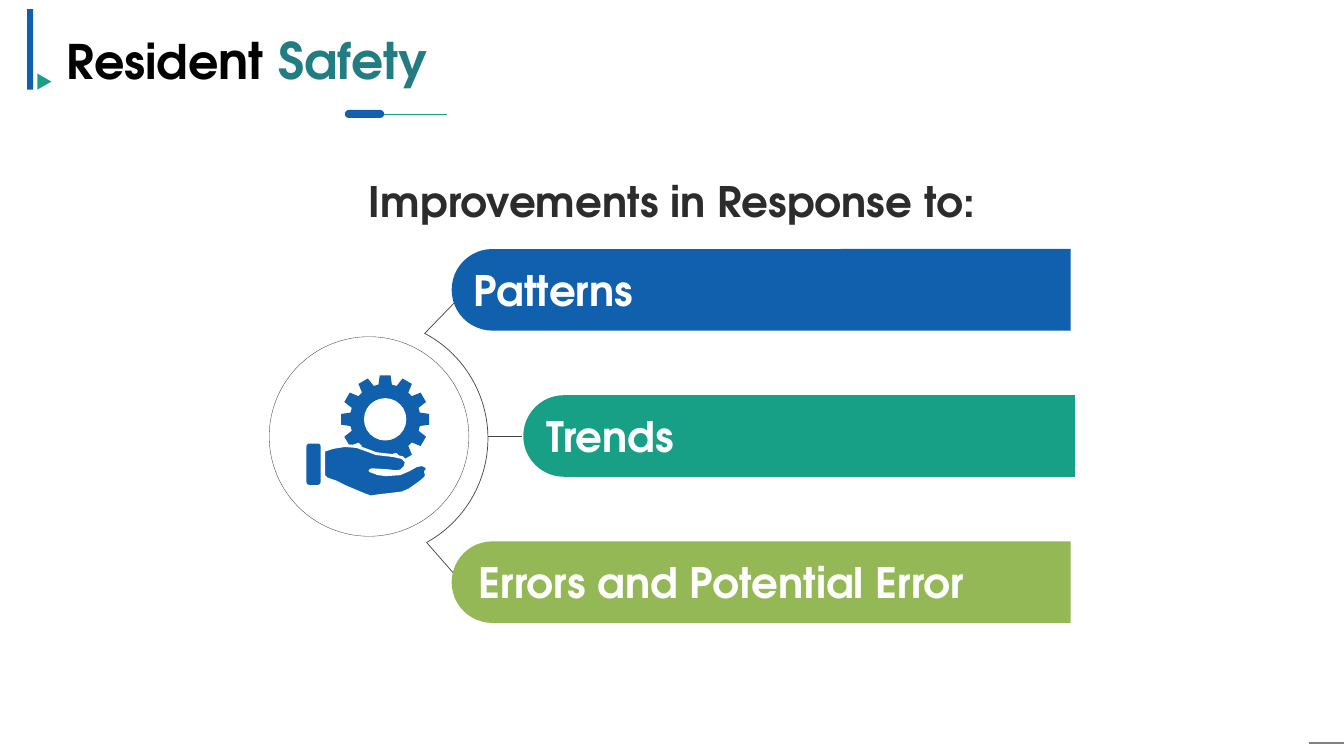
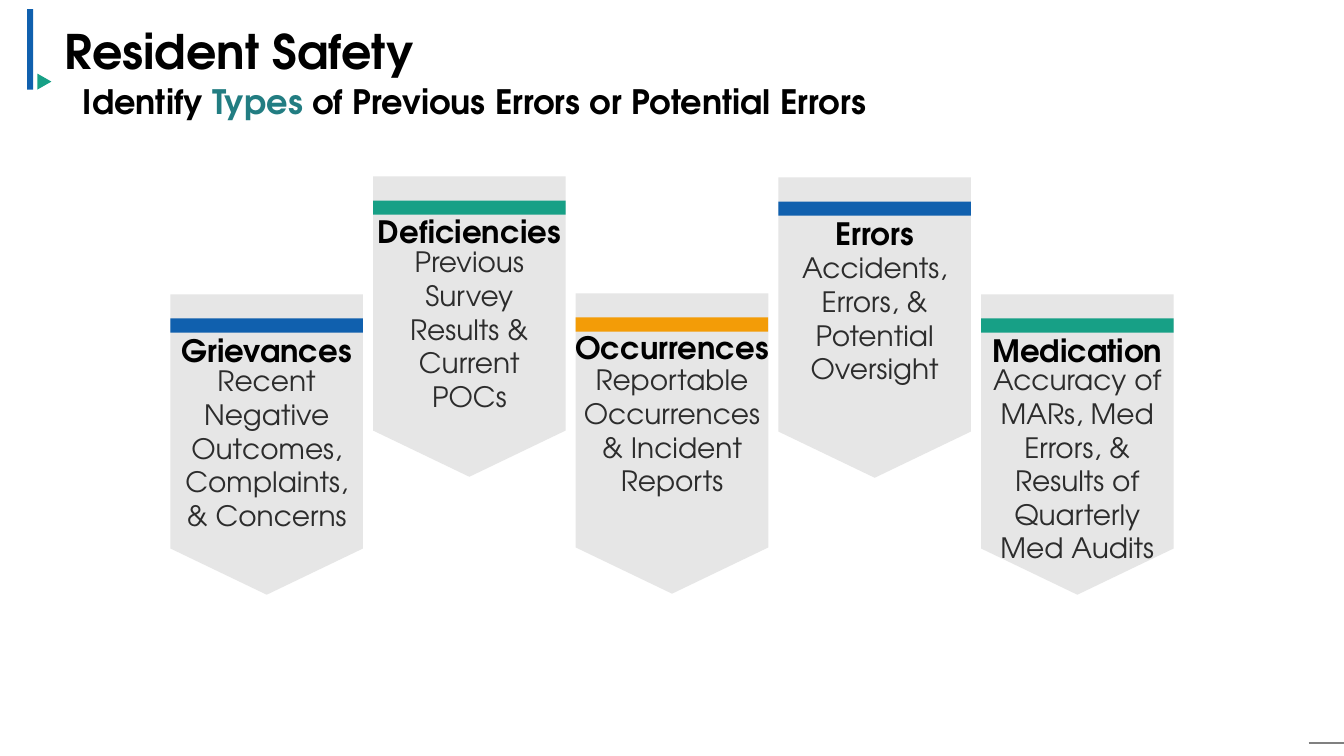
from math import cos, radians, sin

from lxml.etree import SubElement
from pptx import Presentation
from pptx.dml.color import RGBColor
from pptx.enum.shapes import MSO_CONNECTOR, MSO_SHAPE
from pptx.enum.text import MSO_ANCHOR, MSO_AUTO_SIZE, PP_ALIGN
from pptx.oxml.ns import qn
from pptx.util import Inches, Pt

FONT = "TeX Gyre Adventor"
BLUE = RGBColor(0x10, 0x60, 0xAE)
GREEN = RGBColor(0x17, 0xA0, 0x86)
LIME = RGBColor(0x95, 0xB8, 0x56)
AMBER = RGBColor(0xF3, 0x9C, 0x07)
TEAL = RGBColor(0x22, 0x7D, 0x82)
BLACK = RGBColor(0, 0, 0)
WHITE = RGBColor(0xFF, 0xFF, 0xFF)
INK = RGBColor(0x2C, 0x2C, 0x2C)
WIRE = RGBColor(0x43, 0x43, 0x43)
GREY = RGBColor(0x80, 0x80, 0x80)
PALE = RGBColor(0xE6, 0xE6, 0xE6)

BARS = [
    ("Patterns", BLUE, 4.48, 2.47, 10.62, 4.65),
    ("Trends", GREEN, 5.19, 3.92, 10.66, 5.37),
    ("Errors and Potential Error", LIME, 4.48, 5.37, 10.62, 4.7),
]
CARDS = [
    ("Grievances", "Recent Negative Outcomes, Complaints, & Concerns",
     BLUE, 2.92, 1.77, 0.32, 0.64),
    ("Deficiencies", "Previous Survey Results & Current POCs",
     GREEN, 1.75, 1.52, 0.31, 0.63),
    ("Occurrences", "Reportable Occurrences & Incident Reports",
     AMBER, 2.91, 1.89, 0.3, 0.64),
    ("Errors", "Accidents, Errors, & Potential Oversight",
     BLUE, 1.76, 1.71, 0.32, 0.68),
    ("Medication", "Accuracy of MARs, Med Errors, & Results of Quarterly Med Audits",
     GREEN, 2.92, 1.9, 0.32, 0.63),
]
HAND = [
    (3.21, 4.47), (3.3, 4.44), (3.42, 4.42), (3.54, 4.43), (3.65, 4.47),
    (3.73, 4.5), (3.9, 4.52), (3.99, 4.54), (4.03, 4.58), (4.02, 4.63),
    (3.98, 4.67), (3.93, 4.68), (3.85, 4.67), (3.69, 4.66), (3.67, 4.67),
    (3.75, 4.7), (3.83, 4.71), (3.97, 4.7), (4.06, 4.66), (4.13, 4.62),
    (4.19, 4.61), (4.23, 4.63), (4.24, 4.66), (4.22, 4.68), (4.23, 4.71),
    (4.22, 4.74), (4.16, 4.79), (4.06, 4.86), (3.99, 4.89), (3.91, 4.9),
    (3.74, 4.92), (3.68, 4.93), (3.62, 4.91), (3.43, 4.83), (3.33, 4.78),
    (3.24, 4.75), (3.21, 4.72),
]


def paint(shape, fill, line=None, width=0.5):
    """Set the fill and outline of a shape and drop its shadow."""
    shape.shadow.inherit = False
    if fill is None:
        shape.fill.background()
    else:
        shape.fill.solid()
        shape.fill.fore_color.rgb = fill
    if line is None:
        shape.line.fill.background()
    else:
        shape.line.color.rgb = line
        shape.line.width = Pt(width)
    return shape


def block(slide, kind, box, fill, turn=0, bends=(), **look):
    """Add a preset shape; box is the place it covers once turned."""
    x, y, w, h = box
    if turn in (90, 270):
        x, y, w, h = x + (w - h) / 2, y + (h - w) / 2, h, w
    shape = slide.shapes.add_shape(kind, *map(Inches, (x, y, w, h)))
    shape.rotation = turn
    for spot, bend in enumerate(bends):
        shape.adjustments[spot] = bend
    return paint(shape, fill, **look)


def trace(slide, spots, fill, **look):
    """Add a closed outline through points given in inches."""
    first, *rest = [(Inches(x), Inches(y)) for x, y in spots]
    pen = slide.shapes.build_freeform(*first)
    pen.add_line_segments(rest, close=True)
    return paint(pen.convert_to_shape(), fill, **look)


def rule(slide, start, end, color=WIRE, width=0.5):
    """Add a straight line."""
    line = slide.shapes.add_connector(
        MSO_CONNECTOR.STRAIGHT, *map(Inches, (*start, *end)))
    line.line.color.rgb = color
    line.line.width = Pt(width)
    SubElement(line._element.spPr, qn("a:effectLst"))


def write(slide, text, box, size=20, color=INK, bold=False, align=PP_ALIGN.LEFT,
          anchor=MSO_ANCHOR.TOP, wrap=True, space=None, holder=None):
    """Write text, or a list of (text, size, colour) runs, in a box."""
    area = tuple(map(Inches, box))
    shape = holder or slide.shapes.add_textbox(*area)
    shape.left, shape.top, shape.width, shape.height = area
    frame = shape.text_frame
    frame.auto_size = MSO_AUTO_SIZE.NONE
    frame.word_wrap = wrap
    frame.vertical_anchor = anchor
    frame.margin_left = frame.margin_right = Inches(0.05)
    frame.margin_top = frame.margin_bottom = Inches(0.05)
    para = frame.paragraphs[0]
    para.alignment = align
    para.line_spacing = space
    runs = [(text, size, color)] if isinstance(text, str) else text
    for part, points, tint in runs:
        run = para.add_run()
        run.text = part
        run.font.name = FONT
        run.font.size = Pt(points)
        run.font.bold = bold
        run.font.color.rgb = tint


def start(deck, title, box, **look):
    """Add a slide with the shared marks and its title."""
    slide = deck.slides.add_slide(deck.slide_layouts[5])
    block(slide, MSO_SHAPE.RECTANGLE, (0.27, 0.09, 0.06, 0.8), BLUE)
    block(slide, MSO_SHAPE.ISOSCELES_TRIANGLE, (0.37, 0.73, 0.14, 0.16), GREEN, 90)
    rule(slide, (12.98, 7.37), (13.33, 7.37), GREY, 1.5)
    write(slide, title, box, size=34, color=BLACK, bold=True,
          holder=slide.shapes.title, **look)
    return slide


def gear(slide, x, y):
    """Draw a gear with twelve teeth around a centre."""
    tooth = [(-11, 0.35), (-7, 0.44), (7, 0.44), (11, 0.35)]
    spots = [(x + r * cos(radians(turn + a)), y + r * sin(radians(turn + a)))
             for turn in range(0, 360, 30) for a, r in tooth]
    trace(slide, spots, BLUE)
    block(slide, MSO_SHAPE.OVAL, (x - 0.21, y - 0.21, 0.42, 0.42), WHITE)


def hub(slide):
    """Draw the ring, its branches and the hand with a gear."""
    rule(slide, (4.21, 3.31), (4.54, 2.97))
    rule(slide, (4.23, 5.38), (4.51, 5.7))
    rule(slide, (4.84, 4.33), (5.18, 4.33))
    block(slide, MSO_SHAPE.ARC, (2.48, 3.17, 2.36, 2.36), None,
          bends=(298 * 0.6, 61 * 0.6), line=WIRE)
    block(slide, MSO_SHAPE.OVAL, (2.67, 3.34, 1.98, 1.98), WHITE,
          line=WIRE, width=0.25)
    gear(slide, 3.82, 4.16)
    trace(slide, HAND, BLUE, line=WHITE, width=2)
    block(slide, MSO_SHAPE.ROUNDED_RECTANGLE, (3.04, 4.4, 0.14, 0.41), BLUE,
          bends=(0.2,))


def bar(slide, text, fill, left, top, right, inset):
    """Draw a bar with a round left end and its label."""
    block(slide, MSO_SHAPE.ROUND_2_SAME_RECTANGLE,
          (left, top, right - left, 0.81), fill, 270, (0.5, 0))
    write(slide, text, (inset, top + 0.1, right - inset, 0.61), size=30,
          color=WHITE, bold=True, anchor=MSO_ANCHOR.MIDDLE)


def card(slide, left, head, body, color, top, width, high, low):
    """Draw a pointed card with a stripe, a heading and a text."""
    wide = 1.91
    block(slide, MSO_SHAPE.PENTAGON, (left, top, wide, 2.98), PALE, 90, (0.24,))
    block(slide, MSO_SHAPE.RECTANGLE, (left, top + 0.24, wide, 0.14), color)
    write(slide, body, (left + (wide - width) / 2, top + low, width, 2.12),
          align=PP_ALIGN.CENTER)
    write(slide, head, (left, top + high, wide, 0.48), size=22, color=BLACK,
          bold=True, align=PP_ALIGN.CENTER, wrap=False)


def causes(deck):
    """Build the slide on what leads to improvements."""
    title = [("Reside", 34, BLACK), ("nt ", 36, BLACK), ("Safety", 36, TEAL)]
    slide = start(deck, title, (0.61, 0.24, 4.16, 0.71))
    rule(slide, (3.69, 1.13), (4.43, 1.13), GREEN)
    block(slide, MSO_SHAPE.ROUNDED_RECTANGLE, (3.42, 1.09, 0.39, 0.08), BLUE,
          bends=(0.5,))
    write(slide, "Improvements in Response to:", (1.75, 1.69, 9.83, 0.61),
          size=30, bold=True, align=PP_ALIGN.CENTER)
    hub(slide)
    for item in BARS:
        bar(slide, *item)


def types(deck):
    """Build the slide on the types of errors."""
    slide = start(deck, "Resident Safety", (0.59, 0.15, 10.65, 0.77),
                  anchor=MSO_ANCHOR.MIDDLE, space=0.9)
    lead = [("Identify ", 24, BLACK), ("Types", 24, TEAL),
            (" of Previous Errors or Potential Errors", 24, BLACK)]
    write(slide, lead, (0.77, 0.62, 10.48, 0.77), bold=True,
          anchor=MSO_ANCHOR.MIDDLE)
    for spot, item in enumerate(CARDS):
        card(slide, 1.69 + 2.01 * spot, *item)


def main():
    """Build and save the deck."""
    deck = Presentation()
    deck.slide_width, deck.slide_height = Inches(13.33), Inches(7.5)
    causes(deck)
    types(deck)
    deck.save("out.pptx")


if __name__ == "__main__":
    main()
